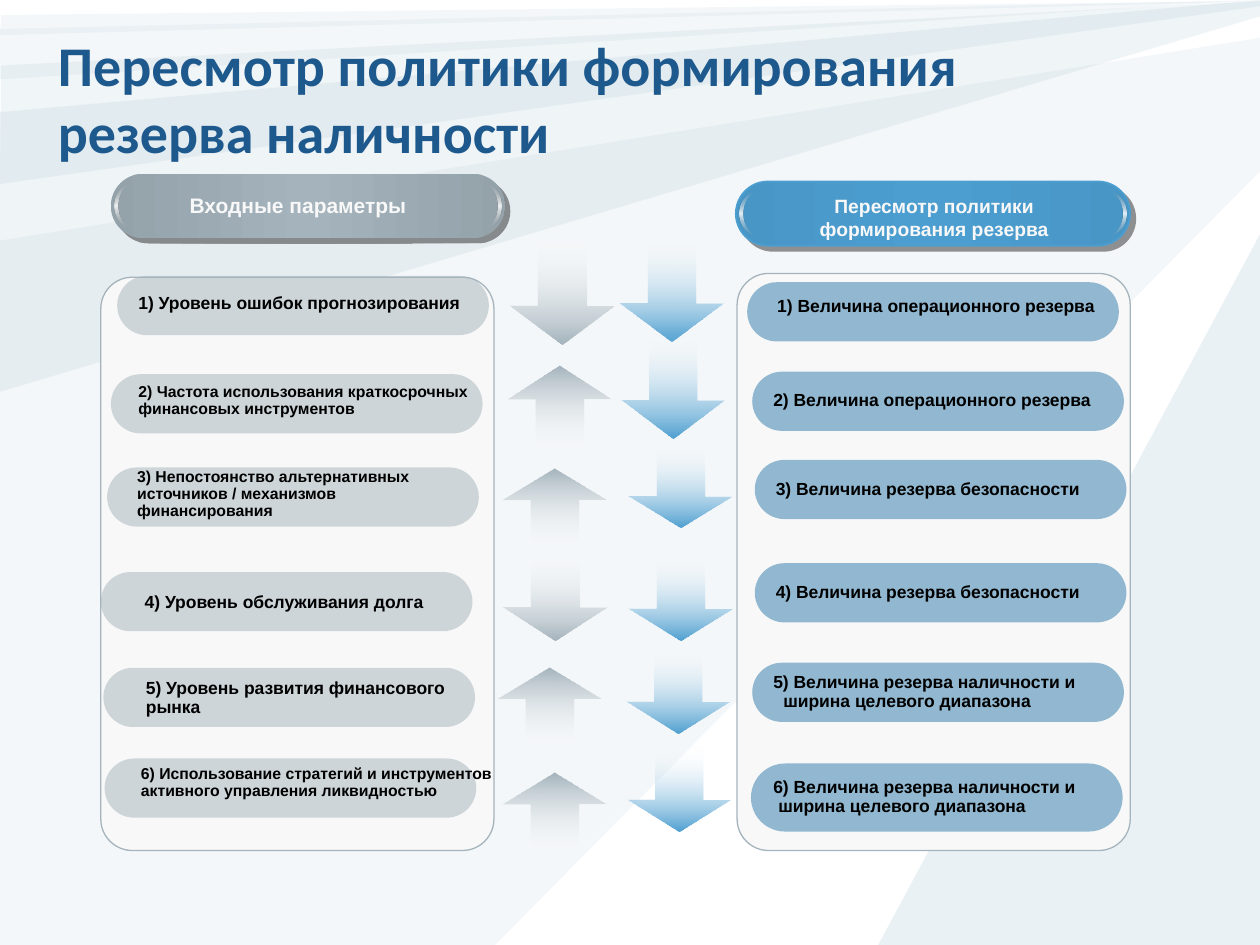
from lxml import etree
from pptx import Presentation
from pptx import util as u
from pptx.dml.color import RGBColor
from pptx.enum import shapes, text
from pptx.oxml.ns import qn

COLORS = {
    "title": "1E598E", "ray": "97BAC9", "panel": "F8F8F8", "ink": "000000",
    "gray": "A4B3BC", "gray_edge": "94A2AA", "blue": "4C9ED0", "blue_edge": "4896C6",
    "blue_pill": "2C7AA9", "shine": "B6B6B6", "white": "FFFFFF", "shadow": "292929",
}
TITLE = "Пересмотр политики формирования резерва наличности"

# opacity in percent, corner points
RAYS = [
    (10, [(10, 0.3), (0, 1.91), (0, 7.5), (3.93, 7.5), (10, 1.36)]),
    (20, [(10, 1.86), (6.97, 7.5), (10, 7.5)]),
    (10, [(0.01, 0.12), (0, 0.28), (10, 0.01)]),
    (10, [(9.99, 0), (0, 0.63), (0, 0.23)]),
    (15, [(10, 0.13), (0, 3.11), (0, 0.89), (10, 0)]),
    (14, [(10, 0.01), (0.01, 0.52), (0, 1.46), (10, 0.05)]),
]
PANELS = [(0.8, 2.2, 3.12, 4.55), (5.85, 2.17, 3.12, 4.58)]

# wording, size, text frame, pill left, pill top, colour, edge colour, outlined
HEADERS = [
    ("Входные параметры", 12, (1.14, 1.48, 2.45, 0.3), 0.88, 1.38, "gray", "gray_edge", False),
    ("Пересмотр политики формирования резерва", 11, (6.03, 1.49, 2.77, 0.47),
     5.84, 1.44, "blue", "blue_edge", True),
]
# lines, size, text frame, pill left, pill top
INPUTS = [
    (["1) Уровень ошибок прогнозирования"], 10, (1, 2.29, 2.79, 0.39), 0.93, 2.19),
    (["2) Частота использования краткосрочных финансовых инструментов"], 9,
     (1, 3, 2.98, 0.37), 0.88, 2.97),
    (["3) Непостоянство альтернативных источников / механизмов финансирования"], 9,
     (0.99, 3.67, 2.86, 0.51), 0.85, 3.71),
    (["4) Уровень обслуживания долга"], 10, (1.05, 4.66, 2.45, 0.25), 0.8, 4.54),
    (["5) Уровень развития финансового", "рынка"], 10, (1.06, 5.34, 2.6, 0.4), 0.82, 5.3),
    (["6) Использование стратегий и инструментов активного управления ликвидностью"], 9,
     (1.02, 6.03, 2.98, 0.51), 0.83, 6.02),
]
# lines, pill left, top, height, indent of the second line
REVIEWS = [
    (["1) Величина операционного резерва"], 5.93, 2.24, 0.47, 0),
    (["2) Величина операционного резерва"], 5.97, 2.95, 0.47, 0),
    (["3) Величина резерва безопасности"], 5.99, 3.65, 0.47, 0),
    (["4) Величина резерва безопасности"], 5.99, 4.47, 0.47, 0),
    (["5) Величина резерва наличности и", "ширина целевого диапазона"], 5.97, 5.26, 0.47, 0.08),
    (["6) Величина резерва наличности и", "ширина целевого диапазона"], 5.96, 6.06, 0.54, 0.04),
]
FIRST_REVIEW_TEXT = (6.07, 2.31, 2.84, 0.37)
UP, DOWN = 270, 90
# left, top, length, direction
GRAY_ARROWS = [(4.02, 1.88, 0.88, DOWN), (4.09, 2.84, 0.7, UP), (4.07, 3.63, 0.66, UP),
               (4.05, 4.31, 0.71, DOWN), (4.03, 5.21, 0.66, UP), (4.07, 6.05, 0.66, UP)]
BLUE_ARROWS = [(4.91, 1.88, 0.84, DOWN), (4.92, 2.65, 0.84, DOWN), (5.06, 3.44, 0.68, DOWN),
               (5.06, 4.33, 0.68, DOWN), (5.04, 5.07, 0.68, DOWN), (5.05, 5.85, 0.68, DOWN)]
PILL_WIDTH, PILL_HEIGHT = 2.95, 0.47
HEADER_WIDTH, HEADER_HEIGHT = 3.13, 0.51


def rgb(color):
    return RGBColor.from_string(COLORS[color])


def node(parent, tag, **attributes):
    child = etree.SubElement(parent, qn("a:" + tag))
    for key, value in attributes.items():
        child.set(key, str(value))
    return child


def color_node(parent, color, opacity=100):
    node(node(parent, "srgbClr", val=COLORS[color]), "alpha", val=opacity * 1000)


def fill_solid(shape, color, opacity=100):
    shape.fill.solid()
    shape.fill.fore_color.rgb = rgb(color)
    if opacity < 100:
        node(shape._element.spPr.find(".//" + qn("a:srgbClr")), "alpha", val=opacity * 1000)


def fill_gradient(shape, stops, angle=0):
    """Stops are (position, colour, opacity), all numbers in percent."""
    shape.fill.gradient()
    gradient = shape._element.spPr.find(qn("a:gradFill"))
    for child in list(gradient):
        gradient.remove(child)
    gradient.set("rotWithShape", "1")
    stop_list = node(gradient, "gsLst")
    for position, color, opacity in stops:
        color_node(node(stop_list, "gs", pos=position * 1000), color, opacity)
    node(gradient, "lin", ang=angle * 60000, scaled=0)


def add_preset(slide, kind, frame, adjustments, line=None, width=0.75):
    shape = slide.shapes.add_shape(kind, *map(u.Inches, frame))
    for index, value in enumerate(adjustments):
        shape.adjustments[index] = value
    shape.shadow.inherit = False
    if line:
        shape.line.color.rgb = rgb(line)
        shape.line.width = u.Pt(width)
    else:
        shape.line.fill.background()
    return shape


def write(shape, lines, size, color="ink", align=text.PP_ALIGN.LEFT,
          anchor=text.MSO_ANCHOR.TOP, spacing=0.9, indent=0, font="Arial"):
    frame = shape.text_frame
    frame_format = {"word_wrap": True, "auto_size": text.MSO_AUTO_SIZE.NONE,
                    "vertical_anchor": anchor}
    for key, value in frame_format.items():
        setattr(frame, key, value)
    for index, line in enumerate(lines):
        paragraph = frame.add_paragraph() if index else frame.paragraphs[0]
        paragraph.alignment, paragraph.line_spacing = align, spacing
        if index and indent:
            paragraph._p.get_or_add_pPr().set("marL", str(u.Inches(indent)))
        run = paragraph.add_run()
        run.text = line
        for key, value in {"name": font, "size": u.Pt(size), "bold": True}.items():
            setattr(run.font, key, value)
        run.font.color.rgb = rgb(color)


def add_label(slide, frame, lines, size, **style):
    write(slide.shapes.add_textbox(*map(u.Inches, frame)), lines, size, **style)


def add_pill(slide, left, top, color, height=PILL_HEIGHT):
    pill = add_preset(slide, shapes.MSO_SHAPE.ROUNDED_RECTANGLE,
                      (left, top, PILL_WIDTH, height), [0.5])
    fill_solid(pill, color, 50)
    return pill


def add_header(slide, wording, size, frame, left, top, color, edge, outlined):
    """Glossy capsule with a shine at each end."""
    capsule = add_preset(slide, shapes.MSO_SHAPE.ROUNDED_RECTANGLE,
                         (left, top, HEADER_WIDTH, HEADER_HEIGHT), [0.5],
                         color if outlined else None, 1)
    fill_gradient(capsule, [(0, edge, 100), (50, color, 100), (100, edge, 100)])
    effects = capsule._element.spPr.find(qn("a:effectLst"))
    color_node(node(effects, "outerShdw", dist=u.Pt(4.2), dir=45 * 60000, algn="ctr",
                    rotWithShape=0), "shadow", 50)
    for offset, rotation in ((0.03, 0), (2.96, 180)):
        shine = add_preset(slide, shapes.MSO_SHAPE.MOON,
                           (left + offset, top + 0.08, 0.14, 0.35), [0.22])
        shine.rotation = rotation
        fill_gradient(shine, [(0, "shine", 0), (50, "white", 84), (100, "shine", 0)], 90)
    add_label(slide, frame, [wording], size, color="panel",
              align=text.PP_ALIGN.CENTER, spacing=1)


def main():
    deck = Presentation()
    deck.slide_width, deck.slide_height = u.Inches(10), u.Inches(7.5)
    slide = deck.slides.add_slide(deck.slide_layouts[5])

    for opacity, corners in RAYS:
        points = [tuple(map(u.Inches, corner)) for corner in corners]
        builder = slide.shapes.build_freeform(*points[0])
        builder.add_line_segments(points[1:])
        ray = builder.convert_to_shape()
        ray.shadow.inherit = False
        ray.line.fill.background()
        fill_solid(ray, "ray", opacity)

    title = slide.shapes.title
    slide.shapes._spTree.append(title._element)
    title.left, title.top, title.width, title.height = map(u.Inches, (0.36, 0.15, 8.08, 1.25))
    write(title, [TITLE], 32, color="title", anchor=text.MSO_ANCHOR.MIDDLE,
          spacing=1, font="Calibri")

    for frame in PANELS:
        panel = add_preset(slide, shapes.MSO_SHAPE.ROUNDED_RECTANGLE, frame, [0.08], "gray")
        fill_solid(panel, "panel")
    for header in HEADERS:
        add_header(slide, *header)

    for lines, size, frame, left, top in INPUTS:
        add_pill(slide, left, top, "gray")
        add_label(slide, frame, lines, size)
    for index, (lines, left, top, height, indent) in enumerate(REVIEWS):
        pill = add_pill(slide, left, top, "blue_pill", height)
        if index == 0:
            add_label(slide, FIRST_REVIEW_TEXT, lines, 10)
        else:
            write(pill, lines, 10, anchor=text.MSO_ANCHOR.MIDDLE, indent=indent)

    for color, breadth, arrows in (("gray", 0.83, GRAY_ARROWS), ("blue", 0.82, BLUE_ARROWS)):
        for left, top, length, direction in arrows:
            arrow = add_preset(slide, shapes.MSO_SHAPE.RIGHT_ARROW,
                               (left, top, length, breadth), [0.465, 0.376])
            arrow.rotation = direction
            fill_gradient(arrow, [(0, "white", 0), (100, color, 100)])

    deck.save("out.pptx")


if __name__ == "__main__":
    main()
